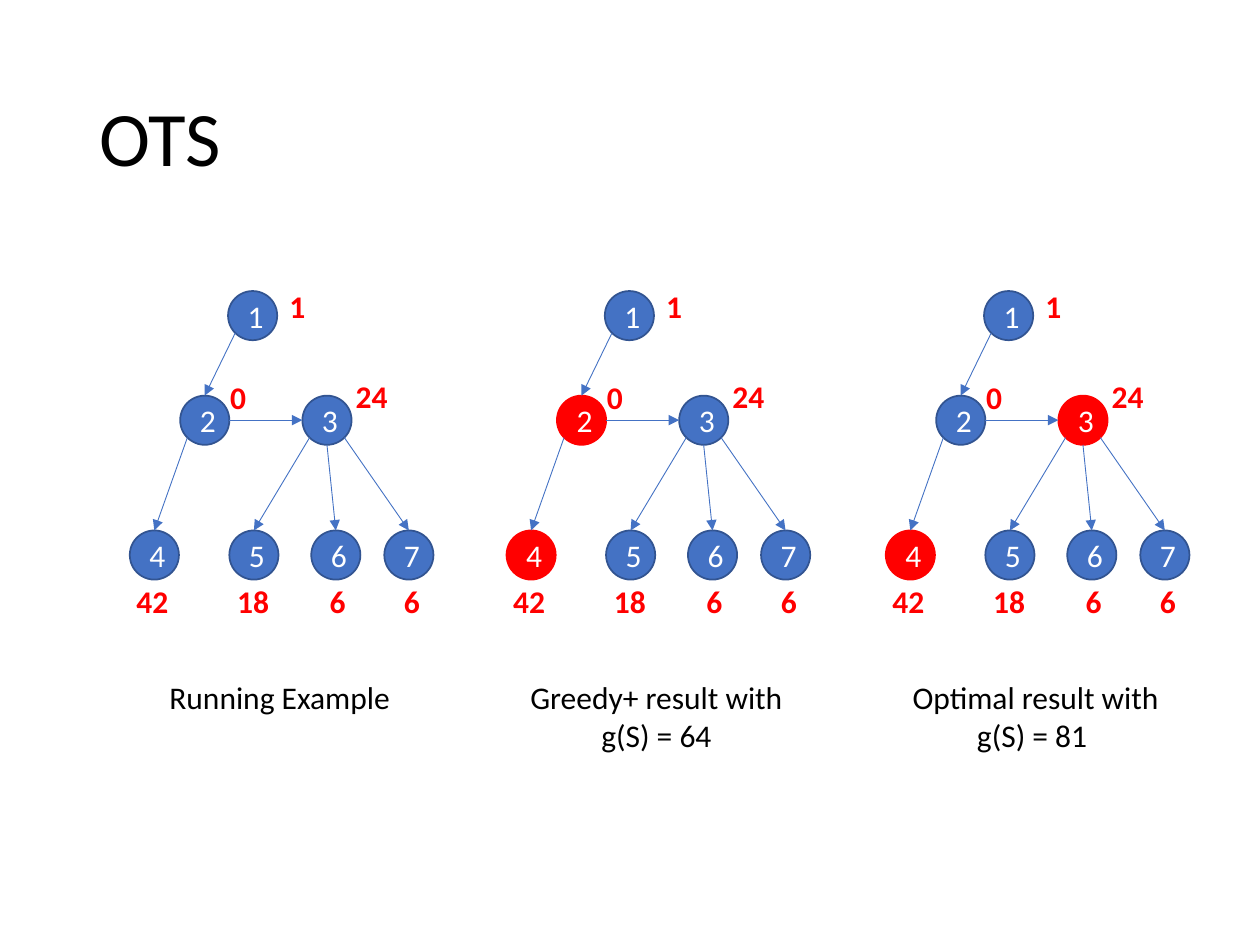
from math import cos, radians, sin

from lxml import etree
from pptx import Presentation
from pptx.dml.color import RGBColor
from pptx.enum.shapes import MSO_CONNECTOR, MSO_SHAPE
from pptx.enum.text import MSO_ANCHOR, MSO_AUTO_SIZE, PP_ALIGN
from pptx.oxml.ns import qn
from pptx.util import Inches, Pt

CIRCLE = MSO_SHAPE.FLOWCHART_CONNECTOR
STRAIGHT = MSO_CONNECTOR.STRAIGHT
LEFT, CENTER = PP_ALIGN.LEFT, PP_ALIGN.CENTER
MIDDLE = MSO_ANCHOR.MIDDLE
NO_FIT, GROW = MSO_AUTO_SIZE.NONE, MSO_AUTO_SIZE.SHAPE_TO_FIT_TEXT

BLUE, DARK_BLUE, RED = "4472C4", "325491", "FF0000"
BLACK, WHITE = "000000", "FFFFFF"
NODE = 0.39  # node diameter

# Tree, with places relative to the left edge of its panel
NODES = {1: (0.78, 2.31), 2: (0.4, 3.14), 3: (1.37, 3.14), 4: (0, 4.21),
         5: (0.79, 4.21), 6: (1.44, 4.21), 7: (2.02, 4.21)}
# From, to, and the angles (clockwise from the right) where the arrow touches
EDGES = [(1, 2, 135, 270), (2, 4, 135, 270), (3, 5, 135, 270),
         (3, 6, 90, 270), (3, 7, 45, 270), (2, 3, 0, 180)]
WEIGHTS = [("1", 1.16, 2.23), ("0", 0.69, 2.95), ("24", 1.69, 2.94),
           ("42", -0.05, 4.57), ("18", 0.75, 4.57), ("6", 1.48, 4.57),
           ("6", 2.07, 4.57)]
# Panel left edge, selected nodes, caption, caption height
PANELS = [(1.03, (), "Running Example", 0.4),
          (4.02, (2, 4), "Greedy+ result with g(S) = 64", 0.71),
          (7.03, (3, 4), "Optimal result with g(S) = 81 ", 0.71)]


def rgb(color):
    return RGBColor.from_string(color)


def write(tf, text, size=18, color=BLACK, bold=False, align=CENTER, spacing=None):
    p = tf.paragraphs[0]
    p.alignment = align
    if spacing:
        p.line_spacing = spacing
    r = p.add_run()
    r.text = text
    r.font.name = "Calibri"
    r.font.size = Pt(size)
    r.font.bold = bold
    r.font.color.rgb = rgb(color)


def rim(node, angle):
    """Point on the rim of a node."""
    x, y = NODES[node]
    radius, a = NODE / 2, radians(angle)
    return x + radius * (1 + cos(a)), y + radius * (1 + sin(a))


class Deck:
    def __init__(self):
        self.prs = Presentation()
        self.prs.slide_width, self.prs.slide_height = Inches(10), Inches(7.5)
        self.s = self.prs.slides.add_slide(self.prs.slide_layouts[5])

    def title(self, text, x, y, w, h):
        sp = self.s.shapes.title
        sp.left, sp.top, sp.width, sp.height = map(Inches, (x, y, w, h))
        tf = sp.text_frame
        tf.auto_size = NO_FIT
        tf.vertical_anchor = MIDDLE
        write(tf, text, size=44, align=LEFT, spacing=0.9)

    def node(self, text, x, y, selected):
        sp = self.s.shapes.add_shape(CIRCLE, *map(Inches, (x, y, NODE, NODE)))
        sp.shadow.inherit = False
        sp.fill.solid()
        sp.fill.fore_color.rgb = rgb(RED if selected else BLUE)
        sp.line.color.rgb = rgb(RED if selected else DARK_BLUE)
        sp.line.width = Pt(1)
        sp.text_frame.vertical_anchor = MIDDLE
        write(sp.text_frame, text, color=WHITE)

    def arrow(self, x1, y1, x2, y2):
        c = self.s.shapes.add_connector(STRAIGHT, *map(Inches, (x1, y1, x2, y2)))
        c.line.color.rgb = rgb(BLUE)
        c.line.width = Pt(0.5)
        etree.SubElement(c.line._get_or_add_ln(), qn("a:tailEnd"), type="triangle")
        etree.SubElement(c._element.spPr, qn("a:effectLst"))

    def label(self, text, x, y, w, h, wrap=True, **style):
        sp = self.s.shapes.add_textbox(*map(Inches, (x, y, w, h)))
        tf = sp.text_frame
        tf.word_wrap = wrap
        tf.auto_size = GROW
        write(tf, text, **style)

    def tree(self, left, selected, caption, caption_height):
        for number, (x, y) in NODES.items():
            self.node(str(number), left + x, y, number in selected)
        for start, end, leave, enter in EDGES:
            x1, y1 = rim(start, leave)
            x2, y2 = rim(end, enter)
            self.arrow(left + x1, y1, left + x2, y2)
        for text, x, y in WEIGHTS:
            width = 0.34 if len(text) == 1 else 0.46
            self.label(text, left + x, y, width, 0.4, wrap=False,
                       color=RED, bold=True)
        self.label(caption, left + 0.07, 5.33, 2.24, caption_height)


def main():
    deck = Deck()
    deck.title("OTS", 0.69, 0.4, 8.62, 1.45)
    for panel in PANELS:
        deck.tree(*panel)
    deck.prs.save("out.pptx")


if __name__ == "__main__":
    main()
